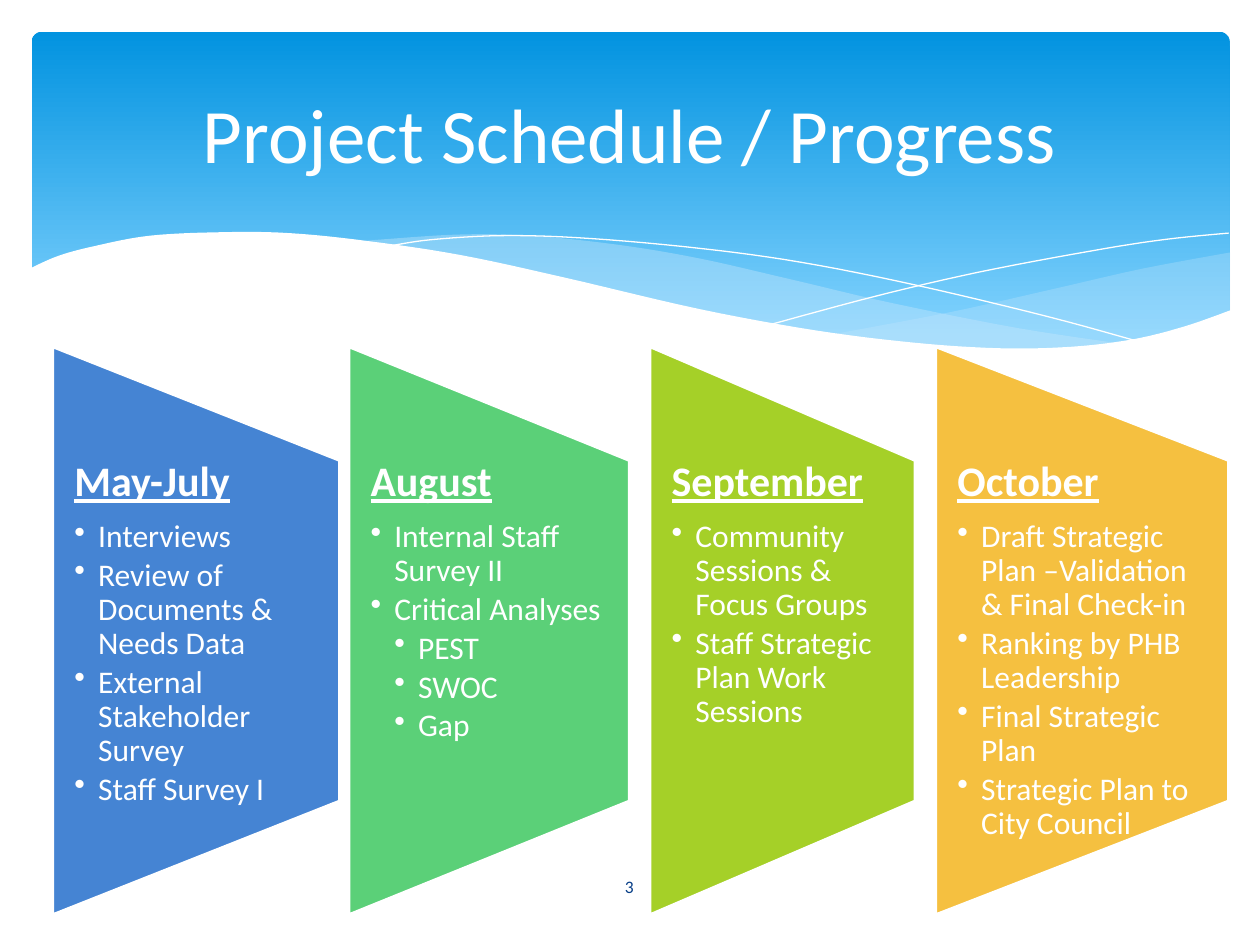
from pptx import Presentation
from pptx.dml.color import RGBColor
from pptx.enum.shapes import MSO_SHAPE as Shape
from pptx.enum.text import MSO_ANCHOR as Anchor, PP_ALIGN as Align
from pptx.oxml.ns import qn
from pptx.util import Cm, Pt
from lxml.etree import SubElement

FONT = "Calibri"
WHITE = RGBColor(0xFF, 0xFF, 0xFF)
SKY_TOP = RGBColor(0x02, 0x93, 0xE0)
SKY_BOTTOM = RGBColor(0x83, 0xD3, 0xFE)
MIST = RGBColor(0xC6, 0xE7, 0xFC)
NAVY = RGBColor(0x07, 0x3E, 0x87)
BLUE = RGBColor(0x45, 0x84, 0xD3)
GREEN = RGBColor(0x5B, 0xD0, 0x78)
LIME = RGBColor(0xA5, 0xD0, 0x28)
AMBER = RGBColor(0xF5, 0xC0, 0x40)

HEADING = {"size": Pt(24), "bold": True, "underline": True}
ITEM = {"size": Pt(18)}
BULLET_STEP = Cm(0.48)

# Wave knots in cm, measured from the top left corner of the banner
RIGHT_BAND_TOP = [(24.16, 4.45), (22.38, 4.78), (20.5, 5.21), (18.49, 5.66), (16.15, 6.1)]
RIGHT_BAND_BASE = [(16.15, 6.1), (17.6, 6.3), (19.2, 6.4), (20.57, 6.4), (21.95, 6.27),
                   (23.11, 6.02), (24.16, 5.64)]
LEFT_BAND_TOP = [(22.05, 6.3), (19.86, 5.97), (17.3, 5.46), (15.34, 5), (13.46, 4.57),
                 (11.79, 4.29), (10.03, 4.11), (8.53, 4.09), (6.63, 4.22)]
LEFT_BAND_BASE = [(6.63, 4.22), (8.56, 4.52), (10.77, 5), (12.83, 5.46), (15.06, 5.92),
                  (17.02, 6.22), (18.69, 6.4), (20.14, 6.45), (22.05, 6.3)]
FALLING_LINE = [(7.21, 4.32), (8.08, 4.19), (9.55, 4.11), (11.28, 4.17), (13.49, 4.37),
                (15.52, 4.65), (17.83, 5.11), (20.47, 5.74), (22.4, 6.27)]
RISING_LINE = [(14.94, 5.89), (17.02, 5.33), (19.08, 4.85), (21.36, 4.42), (22.83, 4.19),
               (24.13, 4.06)]
WHITE_WAVE = [(24.18, 5.61), (23.24, 5.94), (22.2, 6.2), (20.96, 6.35), (19.51, 6.38),
              (17.81, 6.27), (15.8, 6.02), (13.46, 5.59), (10.72, 4.95), (8.64, 4.5),
              (6.78, 4.22), (5.21, 4.06), (3.86, 4.04), (2.39, 4.11), (1.27, 4.32),
              (0.53, 4.52), (-0.05, 4.78)]
WHITE_CORNERS = [(-0.05, 7.72), (24.18, 7.72)]

# Left and width in cm, colour, heading, and (level, text) items
COLUMNS = [
    (1.07, 5.77, BLUE, "May-July", [
        (1, "Interviews"), (1, "Review of Documents & Needs Data"),
        (1, "External Stakeholder Survey"), (1, "Staff Survey I")]),
    (7.04, 5.64, GREEN, "August", [
        (1, "Internal Staff Survey II"), (1, "Critical Analyses"),
        (2, "PEST"), (2, "SWOC"), (2, "Gap")]),
    (13.11, 5.33, LIME, "September", [
        (1, "Community Sessions & Focus Groups"),
        (1, "Staff Strategic Plan Work Sessions")]),
    (18.87, 5.89, AMBER, "October", [
        (1, "Draft Strategic Plan –Validation & Final Check-in"),
        (1, "Ranking by PHB Leadership"), (1, "Final Strategic Plan"),
        (1, "Strategic Plan to City Council")]),
]


def set_all(target, values):
    for name, value in values.items():
        setattr(target, name, value)


def write(paragraph, text, color, **values):
    run = paragraph.add_run()
    run.text = text
    set_all(run.font, {"name": FONT, **values})
    run.font.color.rgb = color


def smooth(knots, steps=6):
    """Return points on a Catmull-Rom curve through the knots."""
    padded = [knots[0], *knots, knots[-1]]
    points = []
    for a, b, c, d in zip(padded, padded[1:], padded[2:], padded[3:]):
        for t in (step / steps for step in range(steps)):
            points.append(tuple(
                q + t * ((r - p) + t * ((2 * p - 5 * q + 4 * r - s)
                                        + t * (3 * q - p - 3 * r + s))) / 2
                for p, q, r, s in zip(a, b, c, d)))
    return points + [knots[-1]]


def add_outline(slide, left, top, points, fill=None, opacity=100):
    """Draw a filled area, or a white hairline when there is no fill."""
    corners = [(left + Cm(x), top + Cm(y)) for x, y in points]
    builder = slide.shapes.build_freeform(*corners[0])
    builder.add_line_segments(corners[1:], close=fill is not None)
    shape = builder.convert_to_shape()
    shape.shadow.inherit = False
    if fill is None:
        shape.fill.background()
        shape.line.color.rgb = WHITE
        shape.line.width = Pt(0)
        return
    shape.fill.solid()
    shape.fill.fore_color.rgb = fill
    shape.line.fill.background()
    if opacity < 100:
        color = shape._element.spPr.find(qn("a:solidFill"))[0]
        SubElement(color, qn("a:alpha"), val=str(opacity * 1000))


def add_banner(slide, left, top, width, height):
    sky = slide.shapes.add_shape(Shape.ROUNDED_RECTANGLE, left, top, width, height)
    sky.adjustments[0] = 0.03
    sky.shadow.inherit = False
    sky.line.fill.background()
    sky.fill.gradient()
    sky.fill.gradient_angle = 270
    for stop, color, position in zip(sky.fill.gradient_stops, (SKY_TOP, SKY_BOTTOM), (0, 0.9)):
        stop.color.rgb = color
        stop.position = position

    right_band = smooth(RIGHT_BAND_TOP) + smooth(RIGHT_BAND_BASE)
    left_band = smooth(LEFT_BAND_TOP) + smooth(LEFT_BAND_BASE)
    add_outline(slide, left, top, right_band, MIST, 29)
    add_outline(slide, left, top, left_band, MIST, 40)
    for line in (FALLING_LINE, RISING_LINE):
        add_outline(slide, left, top, smooth(line))
    add_outline(slide, left, top, smooth(WHITE_WAVE) + WHITE_CORNERS, WHITE)


def place_title(slide, left, top, width, height):
    """Set the title and bring it in front of the banner."""
    title = slide.shapes.title
    set_all(title, {"left": left, "top": top, "width": width, "height": height})
    title.text_frame.vertical_anchor = Anchor.MIDDLE
    paragraph = title.text_frame.paragraphs[0]
    paragraph.alignment = Align.CENTER
    write(paragraph, "Project Schedule / Progress", WHITE, size=Pt(44))
    slide.shapes._spTree.append(title._element)


def add_column(slide, left, top, width, height, color, heading, items):
    # The trapezoid lies on its side, so its own width and height are swapped
    panel = slide.shapes.add_shape(
        Shape.FLOWCHART_MANUAL_OPERATION, left + (width - height) // 2,
        top + (height - width) // 2, height, width)
    panel.rotation = 270
    panel.shadow.inherit = False
    panel.fill.solid()
    panel.fill.fore_color.rgb = color
    panel.line.color.rgb = WHITE
    panel.line.width = Pt(1.25)

    box = slide.shapes.add_textbox(left, top + height // 5, width, height * 3 // 5)
    frame = box.text_frame
    set_all(frame, {"word_wrap": True, "margin_left": Cm(0.43), "margin_right": Cm(0.43),
                    "margin_top": 0, "margin_bottom": 0})
    paragraph = frame.paragraphs[0]
    set_all(paragraph, {"line_spacing": 0.9, "space_after": Pt(8.4)})
    write(paragraph, heading, WHITE, **HEADING)
    for level, text in items:
        paragraph = frame.add_paragraph()
        set_all(paragraph, {"level": level, "line_spacing": 0.9, "space_after": Pt(2.7)})
        properties = paragraph._p.get_or_add_pPr()
        properties.set("marL", str(level * BULLET_STEP))
        properties.set("indent", str(-BULLET_STEP))
        SubElement(properties, qn("a:buChar"), char="•")
        write(paragraph, text, WHITE, **ITEM)


def add_page_number(slide, left, top, width, height):
    frame = slide.shapes.add_textbox(left, top, width, height).text_frame
    set_all(frame, {"word_wrap": True, "vertical_anchor": Anchor.MIDDLE})
    frame.paragraphs[0].alignment = Align.CENTER
    write(frame.paragraphs[0], "3", NAVY, size=Pt(10))


def main():
    presentation = Presentation()
    set_all(presentation, {"slide_width": Cm(25.4), "slide_height": Cm(19.05)})
    slide = presentation.slides.add_slide(presentation.slide_layouts[5])
    add_banner(slide, Cm(0.64), Cm(0.64), Cm(24.15), Cm(6.86))
    place_title(slide, Cm(1.27), Cm(0.94), Cm(22.86), Cm(3.48))
    for left, width, *content in COLUMNS:
        add_column(slide, Cm(left), Cm(7), Cm(width), Cm(11.43), *content)
    add_page_number(slide, Cm(11.07), Cm(17.37), Cm(3.23), Cm(1.02))
    presentation.save("out.pptx")


if __name__ == "__main__":
    main()
